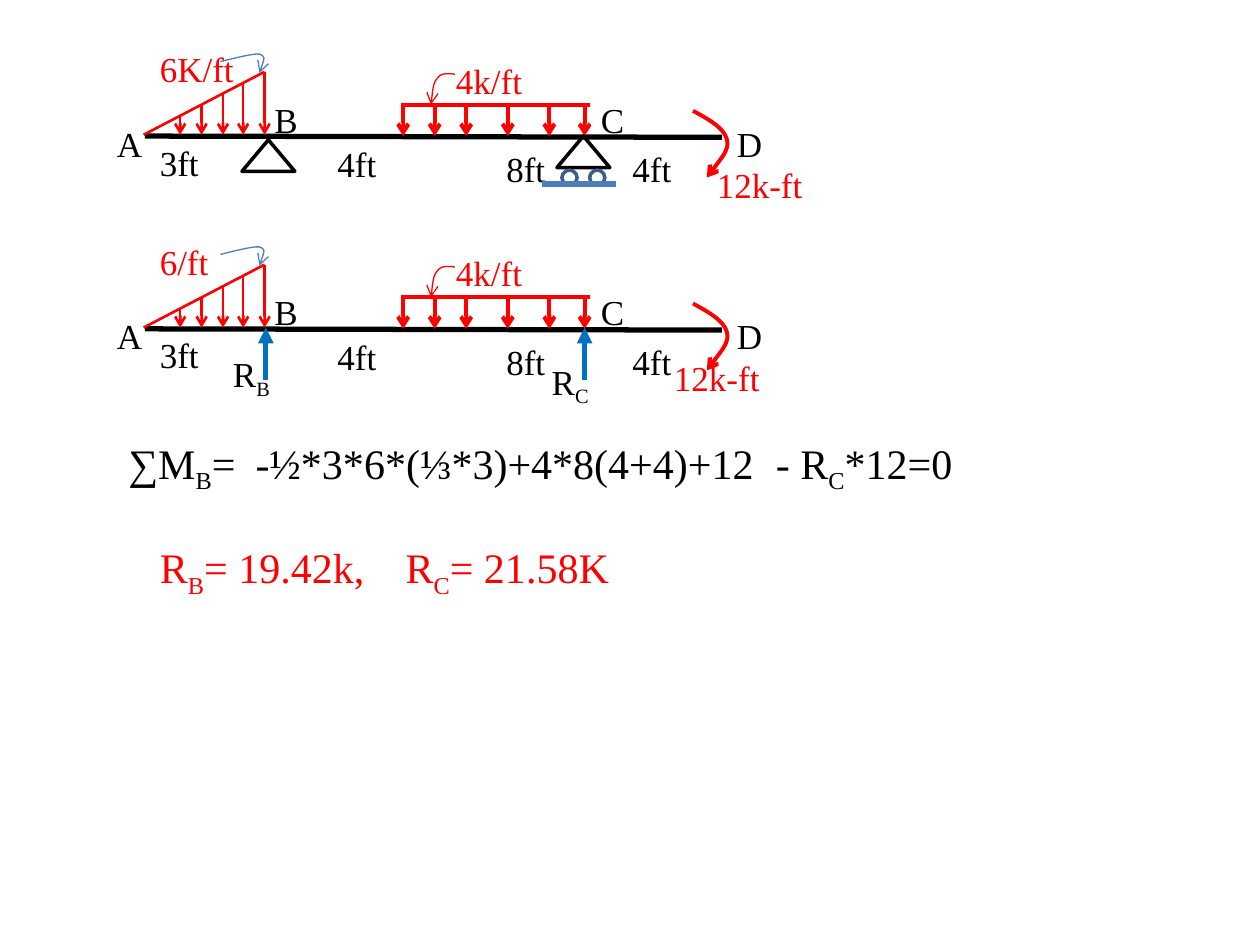
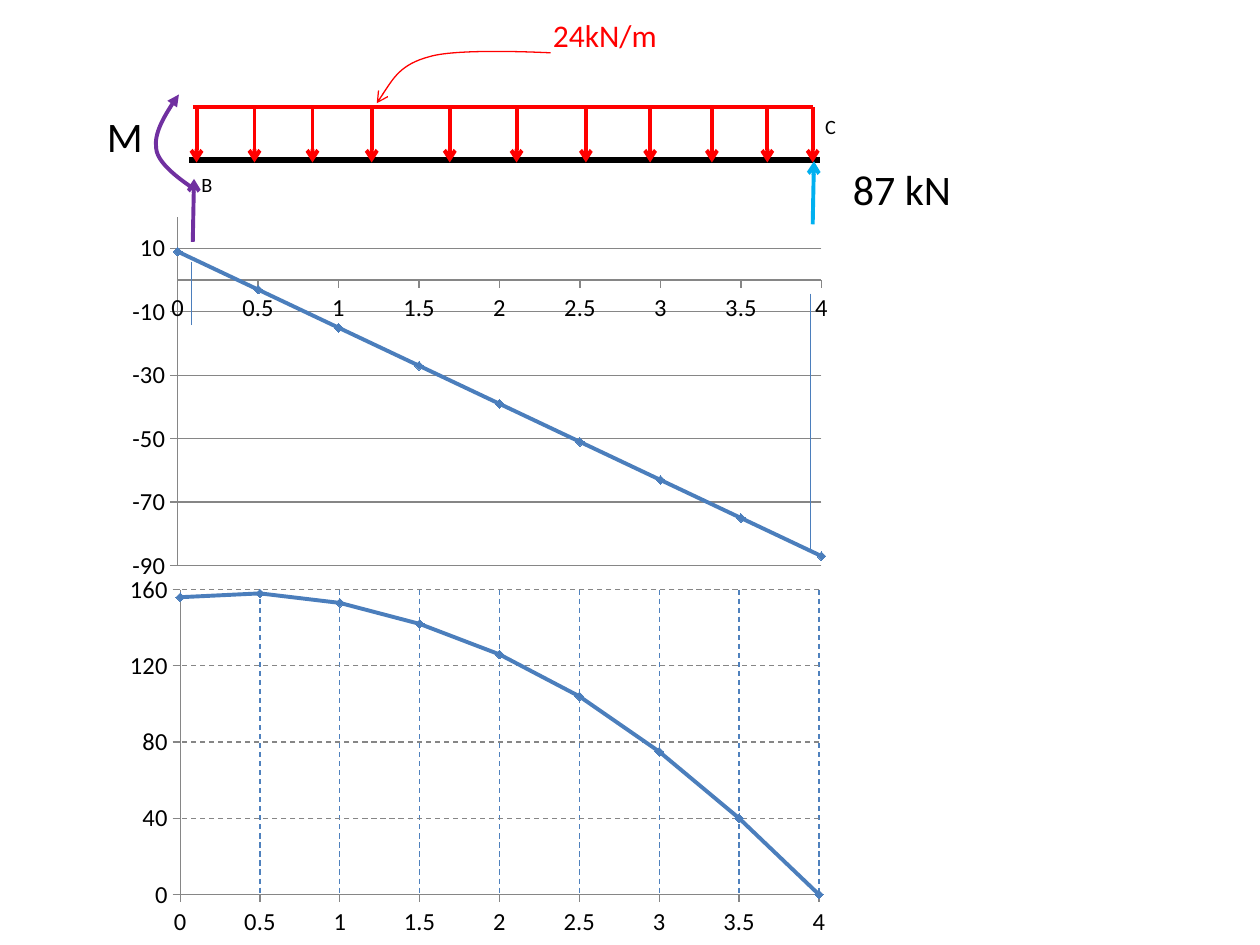
from lxml.etree import SubElement
from pptx import Presentation
from pptx.chart.data import XyChartData
from pptx.dml.color import RGBColor
from pptx.enum.chart import XL_CHART_TYPE, XL_MARKER_STYLE, XL_TICK_MARK
from pptx.enum.dml import MSO_LINE
from pptx.enum.shapes import MSO_CONNECTOR, MSO_SHAPE
from pptx.oxml.ns import qn
from pptx.util import Inches, Pt

BLACK = RGBColor(0x00, 0x00, 0x00)
RED = RGBColor(0xFF, 0x00, 0x00)
BLUE = RGBColor(0x4B, 0x7E, 0xBC)
SERIES_BLUE = RGBColor(0x4F, 0x81, 0xBD)
ROLLER_BLUE = RGBColor(0x3A, 0x5F, 0x8C)
REACTION_BLUE = RGBColor(0x00, 0x70, 0xC0)
SUPPORT_BLUE = RGBColor(0x00, 0xB0, 0xF0)
PURPLE = RGBColor(0x70, 0x30, 0xA0)
GREY = RGBColor(0x86, 0x86, 0x86)
SERIF, SANS = "Times New Roman", "Calibri"

# Labels: text, left, top, width, height, colour. Text between underscores is subscript.
BEAM_LABELS = [
    ("4ft", 2.58, 1.08, 0.73, 0.46, BLACK),
    ("4k/ft", 3.52, 0.42, 0.83, 0.44, RED),
    ("4ft", 4.92, 1.12, 0.58, 0.37, BLACK),
    ("8ft", 3.92, 1.12, 0.73, 0.46, BLACK),
    ("C", 4.67, 0.73, 0.42, 0.46, BLACK),
    ("D", 5.75, 0.92, 0.42, 0.46, BLACK),
    ("B", 2.08, 0.73, 0.42, 0.46, BLACK),
    ("A", 0.83, 0.92, 0.42, 0.33, BLACK),
    ("3ft", 1.17, 1.07, 0.73, 0.46, BLACK),
]
LOADED_BEAM_LABELS = [
    ("12k-ft", 5.59, 1.25, 0.99, 0.44, RED),
    ("6K/ft", 1.17, 0.33, 0.83, 0.44, RED),
]
FREE_BODY_LABELS = [
    ("12k-ft", 5.25, 2.78, 0.91, 0.44, RED),
    ("6/ft", 1.17, 1.86, 0.83, 0.44, RED),
    ("R_B_", 1.75, 2.75, 0.58, 0.44, BLACK),
    ("R_C_", 4.28, 2.81, 0.55, 0.44, BLACK),
]
# Equations: label, then tab stops
EQUATIONS = [
    (("R_B_= 19.42k,\tR_C_= 21.58K", 1.17, 4.25, 5.51, 0.5, RED), [1.95]),
    (("∑M_B_=\t-½*3*6*(⅓*3)+4*8(4+4)+12\t- R_C_*12=0",
      0.92, 3.42, 7.67, 0.5, BLACK), [1.01, 5.14]),
]
FREE_BODY_DROP = 1.53
UNIFORM_LOAD_X = [3.2, 3.45, 3.7, 4.03, 4.36, 4.64]
TRIANGLE_LOAD_X = [1.43, 1.6, 1.77, 1.93, 2.1]

# Curves: Bezier points, colour, width; the arrowhead is at the last point
BEAM_CURVES = [
    ([(3.61, 0.59), (3.61, 0.59), (3.51, 0.57), (3.48, 0.61),
      (3.44, 0.65), (3.43, 0.74), (3.42, 0.83)], RED, 0.75),
    ([(1.75, 0.49), (1.75, 0.49), (2.01, 0.42), (2.06, 0.43),
      (2.11, 0.45), (2.09, 0.52), (2.06, 0.58)], BLUE, 0.75),
    ([(5.5, 0.88), (5.63, 0.95), (5.75, 1.02), (5.77, 1.11),
      (5.79, 1.19), (5.61, 1.41), (5.61, 1.41)], RED, 2.25),
]
LOAD_POINTER = [(4.37, 0.42), (4.37, 0.42), (3.64, 0.38), (3.41, 0.45),
                (3.18, 0.51), (3.09, 0.67), (2.99, 0.82)]
MOMENT_CURVE = [(1.51, 1.48), (1.44, 1.43), (1.25, 1.3), (1.24, 1.18),
                (1.22, 1.06), (1.35, 0.84), (1.42, 0.75)]

SPAN_LOAD_X = [1.56, 2.02, 2.48, 2.95, 3.57, 4.1, 4.65, 5.16, 5.65, 6.09, 6.45]
SPAN_LABELS = [
    (("24kN/m", 4.29, 0.08, 2.01, 0.72, RED), 18),
    (("_B_", 1.5, 1.13, 0.46, 0.58, BLACK), 20),
    (("_C_", 6.45, 0.67, 0.46, 0.58, BLACK), 20),
    (("87 kN", 6.67, 1.25, 1.42, 0.5, BLACK), 24),
    (("M", 0.75, 0.83, 0.92, 0.5, BLACK), 24),
]
DISTANCES = [0, 0.5, 1, 1.5, 2, 2.5, 3, 3.5, 4]
# place is the frame and plot the inner plot area: left, top, width, height in inches
SHEAR = dict(values=[9, -3, -15, -27, -39, -51, -63, -75, -87],
             place=(0.93, 1.67, 5.75, 3), plot=(1.41, 1.72, 5.11, 2.77),
             scale=(-90, 20, 20), dashed=False)
MOMENT = dict(values=[156, 158, 153, 142, 126, 104, 75, 40, 0],
              place=(0.92, 4.5, 5.75, 3), plot=(1.43, 4.68, 5.07, 2.42),
              scale=(0, 160, 40), dashed=True)


def style_line(shape, color, width, arrow):
    shape.line.color.rgb = color
    shape.line.width = Pt(width)
    if arrow:
        line = shape.element.spPr.find(qn("a:ln"))
        SubElement(line, qn("a:tailEnd"), type=arrow)


def add_line(shapes, start, end, color, width, arrow=None):
    points = [Inches(value) for value in (*start, *end)]
    connector = shapes.add_connector(MSO_CONNECTOR.STRAIGHT, *points)
    style_line(connector, color, width, arrow)
    SubElement(connector.element.spPr, qn("a:effectLst"))


def add_curve(shapes, points, color, width, arrow="arrow", drop=0):
    """Draw cubic Bezier segments: a start, then three points for each segment."""
    start, *rest = [(Inches(x), Inches(y + drop)) for x, y in points]
    builder = shapes.build_freeform(*start)
    builder.add_line_segments(rest, close=False)
    shape = builder.convert_to_shape()
    path = shape.element.find(".//" + qn("a:path"))
    segments = path.findall(qn("a:lnTo"))
    for first in range(0, len(segments), 3):
        cubic = SubElement(path, qn("a:cubicBezTo"))
        for segment in segments[first:first + 3]:
            cubic.append(segment[0])
            path.remove(segment)
    shape.fill.background()
    shape.shadow.inherit = False
    style_line(shape, color, width, arrow)


def add_outline(shapes, kind, place, color):
    shape = shapes.add_shape(kind, *[Inches(value) for value in place])
    shape.fill.background()
    shape.shadow.inherit = False
    style_line(shape, color, 2, None)


def add_label(shapes, label, size, font, drop=0, tabs=()):
    text, left, top, width, height, color = label
    box = shapes.add_textbox(Inches(left), Inches(top + drop), Inches(width), Inches(height))
    box.text_frame.word_wrap = True
    paragraph = box.text_frame.paragraphs[0]
    for index, part in enumerate(text.split("_")):
        if not part:
            continue
        run = paragraph.add_run()
        run.text = part
        run.font.size = Pt(size)
        run.font.name = font
        run.font.color.rgb = color
        if index % 2:
            run._r.get_or_add_rPr().set("baseline", "-25000")
    if tabs:
        tab_list = SubElement(paragraph._p.get_or_add_pPr(), qn("a:tabLst"))
        for tab in tabs:
            SubElement(tab_list, qn("a:tab"), pos=str(Inches(tab)), algn="l")


def add_beam(shapes, drop):
    """Draw the beam with its loads and span labels, lowered by drop inches."""
    def line(start, end, color, width, arrow=None):
        add_line(shapes, (start[0], start[1] + drop), (end[0], end[1] + drop),
                 color, width, arrow)

    line((1.15, 1.08), (5.73, 1.09), BLACK, 3)
    line((3.18, 0.83), (4.68, 0.83), RED, 2.25)
    for x in UNIFORM_LOAD_X:
        line((x, 0.83), (x, 1.08), RED, 2.25, "arrow")
    left, right, base, peak = 1.14, 2.1, 1.07, 0.57
    line((left, base), (right, peak), RED, 1.5)
    for x in TRIANGLE_LOAD_X:
        top = base - (base - peak) * (x - left) / (right - left)
        line((x, top), (x, base), RED, 1.5, "arrow")
    for points, color, width in BEAM_CURVES:
        add_curve(shapes, points, color, width, drop=drop)
    for label in BEAM_LABELS:
        add_label(shapes, label, 20, SERIF, drop)


def add_supports(shapes):
    for left, top in ((1.92, 1.11), (4.42, 1.08)):
        add_outline(shapes, MSO_SHAPE.ISOSCELES_TRIANGLE, (left, top, 0.42, 0.25), BLACK)
    for left in (4.46, 4.68):
        add_outline(shapes, MSO_SHAPE.OVAL, (left, 1.35, 0.12, 0.12), ROLLER_BLUE)
    add_line(shapes, (4.3, 1.46), (4.89, 1.46), BLUE, 3)


def set_plot_area(chart, place, plot):
    plot_area = chart.element.find(".//" + qn("c:plotArea"))
    for layout in plot_area.findall(qn("c:layout")):
        plot_area.remove(layout)
    layout = SubElement(plot_area, qn("c:layout"))
    plot_area.insert(0, layout)
    manual = SubElement(layout, qn("c:manualLayout"))
    left, top, width, height = place
    settings = {
        "layoutTarget": "inner", "xMode": "edge", "yMode": "edge",
        "x": (plot[0] - left) / width, "y": (plot[1] - top) / height,
        "w": plot[2] / width, "h": plot[3] / height,
    }
    for name, value in settings.items():
        SubElement(manual, qn("c:" + name), val=str(value))


def style_axis(axis, low, high, step, grid_color, dashed):
    axis.minimum_scale, axis.maximum_scale, axis.major_unit = low, high, step
    axis.major_tick_mark = XL_TICK_MARK.OUTSIDE
    axis.minor_tick_mark = XL_TICK_MARK.NONE
    axis.tick_labels.font.size = Pt(14)
    axis.tick_labels.number_format = "General"
    axis.tick_labels.number_format_is_linked = False
    axis.format.line.color.rgb = GREY
    axis.format.line.width = Pt(0.75)
    axis.has_major_gridlines = grid_color is not None
    if grid_color is not None:
        grid = axis.major_gridlines.format.line
        grid.color.rgb = grid_color
        grid.width = Pt(0.75)
        if dashed:
            grid.dash_style = MSO_LINE.DASH


def add_diagram(shapes, values, place, plot, scale, dashed):
    data = XyChartData()
    points = data.add_series("Series 1")
    for x, y in zip(DISTANCES, values):
        points.add_data_point(x, y)
    frame = [Inches(value) for value in place]
    chart = shapes.add_chart(XL_CHART_TYPE.XY_SCATTER_LINES, *frame, data).chart
    chart.has_title = False
    chart.has_legend = False
    chart.font.name = SANS
    chart.font.size = Pt(10)
    chart.font.color.rgb = BLACK
    chart.plots[0].vary_by_categories = False
    style_axis(chart.category_axis, 0, 4, 0.5, SERIES_BLUE if dashed else None, dashed)
    style_axis(chart.value_axis, *scale, GREY, dashed)
    series = chart.plots[0].series[0]
    series.smooth = False
    series.format.line.color.rgb = BLUE
    series.format.line.width = Pt(2.25)
    series.marker.style = XL_MARKER_STYLE.DIAMOND
    series.marker.size = 5
    series.marker.format.fill.solid()
    series.marker.format.fill.fore_color.rgb = SERIES_BLUE
    series.marker.format.line.color.rgb = BLUE
    set_plot_area(chart, place, plot)


def build_reactions_slide(slide):
    loaded_beam = slide.shapes.add_group_shape().shapes
    add_beam(loaded_beam, 0)
    add_supports(loaded_beam)
    for label in LOADED_BEAM_LABELS:
        add_label(loaded_beam, label, 20, SERIF)

    free_body = slide.shapes.add_group_shape().shapes
    add_beam(free_body, FREE_BODY_DROP)
    for x in (2.11, 4.64):
        add_line(free_body, (x, 3.02), (x, 2.6), REACTION_BLUE, 3, "triangle")
    for label in FREE_BODY_LABELS:
        add_label(free_body, label, 20, SERIF)

    for label, tabs in EQUATIONS:
        add_label(slide.shapes, label, 24, SERIF, tabs=tabs)


def build_diagrams_slide(slide):
    shapes = slide.shapes
    span = shapes.add_group_shape().shapes
    add_line(span, (1.5, 1.27), (6.51, 1.27), BLACK, 3)
    add_line(span, (1.53, 0.85), (6.45, 0.85), RED, 2.25)
    for x in SPAN_LOAD_X:
        add_line(span, (x, 0.85), (x, 1.29), RED, 2.25, "arrow")
    add_curve(span, LOAD_POINTER, RED, 0.75)
    add_line(span, (6.45, 1.78), (6.46, 1.28), SUPPORT_BLUE, 2.25, "arrow")
    for label, size in SPAN_LABELS:
        add_label(shapes, label, size, SANS)
    add_curve(shapes, MOMENT_CURVE, PURPLE, 2.25, "triangle")
    add_line(shapes, (1.53, 1.92), (1.54, 1.42), PURPLE, 2.25, "arrow")
    add_diagram(shapes, **SHEAR)
    add_line(shapes, (6.43, 2.33), (6.43, 4.38), BLUE, 0.75)
    add_line(shapes, (1.52, 2.58), (1.52, 2.08), BLUE, 0.75)
    add_diagram(shapes, **MOMENT)


def main():
    presentation = Presentation()
    presentation.slide_width, presentation.slide_height = Inches(10), Inches(7.5)
    blank = presentation.slide_layouts[6]
    for build in (build_reactions_slide, build_diagrams_slide):
        build(presentation.slides.add_slide(blank))
    presentation.save("out.pptx")


if __name__ == "__main__":
    main()
